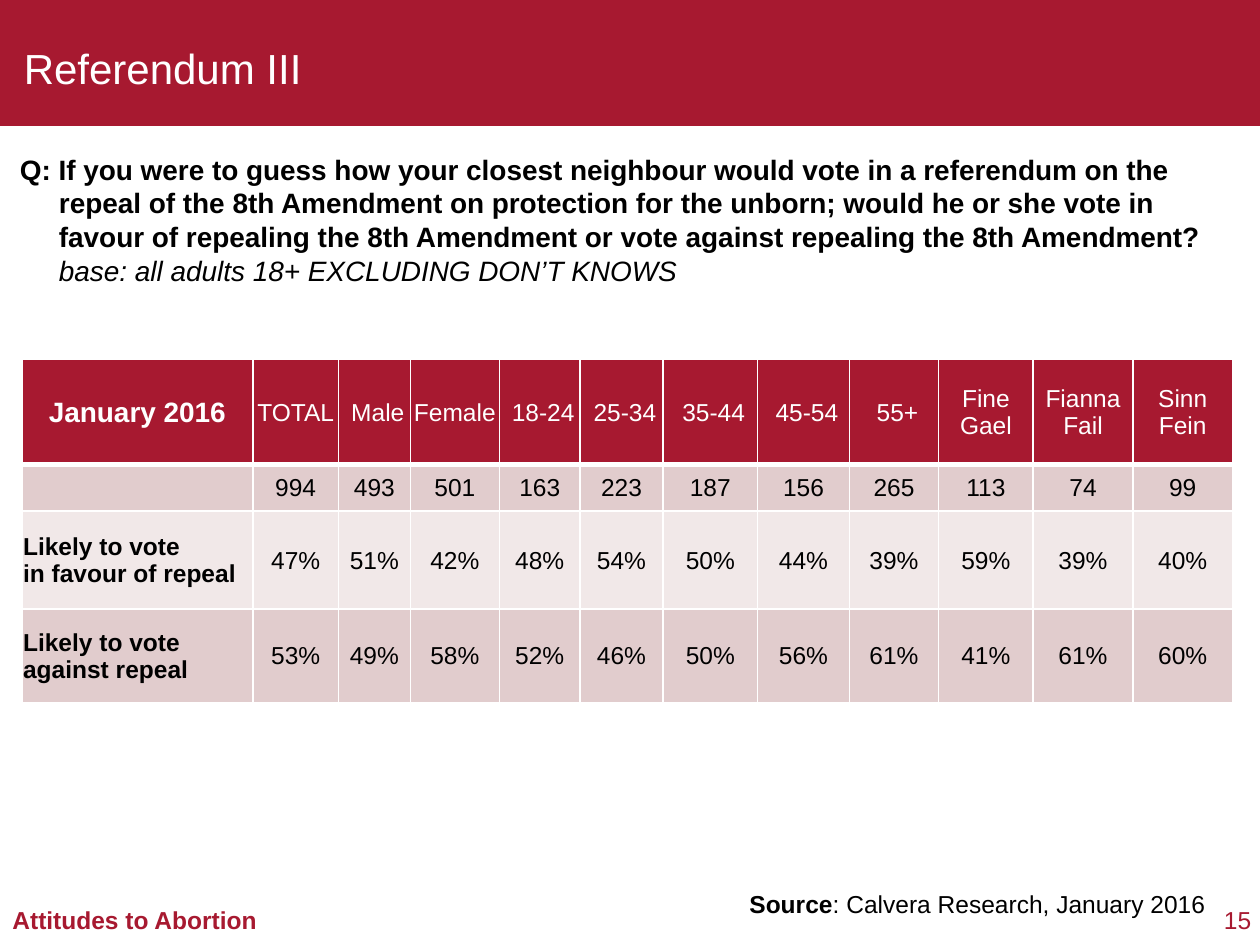
from lxml import etree
from pptx import Presentation
from pptx import util as u
from pptx.dml import color
from pptx.enum import shapes, text
from pptx.oxml import ns

Pt = u.Pt
COLORS = {"brand": "A71930", "white": "FFFFFF", "black": "000000",
          "band": "E1CCCD", "light": "F1E8E8"}
LEFT, CENTER, RIGHT = text.PP_ALIGN.LEFT, text.PP_ALIGN.CENTER, text.PP_ALIGN.RIGHT
COLUMNS = [132, 49, 41, 51, 46, 47.5, 54, 52.5, 51, 54, 57, 57]
ROWS = [60, 26.5, 56, 53.5]
NUDGED = ["Male", "18-24", "25-34", "35-44", "45-54", "55+"]
DATA = [
    ["January 2016", "TOTAL", "Male", "Female", "18-24", "25-34", "35-44",
     "45-54", "55+", "Fine Gael", "Fianna Fail", "Sinn Fein"],
    ["", "994", "493", "501", "163", "223", "187", "156", "265", "113", "74", "99"],
    ["Likely to vote\nin favour of repeal", "47%", "51%", "42%", "48%", "54%",
     "50%", "44%", "39%", "59%", "39%", "40%"],
    ["Likely to vote\nagainst repeal", "53%", "49%", "58%", "52%", "46%",
     "50%", "56%", "61%", "41%", "61%", "60%"],
]
QUESTION = ("Q: If you were to guess how your closest neighbour would vote in a "
            "referendum on the repeal of the 8th Amendment on protection for the "
            "unborn; would he or she vote in favour of repealing the 8th Amendment "
            "or vote against repealing the 8th Amendment?")


def rgb(name):
    """Return the named palette colour."""
    return color.RGBColor.from_string(COLORS[name])


def add_run(p, content, size=14, fill="black", bold=False, italic=False, align=LEFT):
    """Add one formatted run to a paragraph."""
    p.alignment = align
    r = p.add_run()
    r.text = content
    r.font.name, r.font.size = "Arial", Pt(size)
    r.font.bold, r.font.italic = bold, italic
    r.font.color.rgb = rgb(fill)


def add_box(s, left, top, width, height, inset=True):
    """Add a wrapping text box and return its text frame."""
    tf = s.shapes.add_textbox(Pt(left), Pt(top), Pt(width), Pt(height)).text_frame
    tf.word_wrap = True
    if not inset:
        tf.margin_left = tf.margin_right = tf.margin_top = tf.margin_bottom = 0
    return tf


def add_banner(s):
    """Add the coloured band with the slide title."""
    sp = s.shapes.add_shape(shapes.MSO_SHAPE.RECTANGLE, 0, 0, Pt(720), Pt(72))
    sp.shadow.inherit = False
    sp.fill.solid()
    sp.fill.fore_color.rgb = rgb("brand")
    sp.line.fill.background()
    tf = add_box(s, 6.5, 18, 558, 41)
    tf.vertical_anchor = text.MSO_ANCHOR.MIDDLE
    add_run(tf.paragraphs[0], "Referendum III", size=24, fill="white")


def add_question(s):
    """Add the survey question with its hanging indent and base note."""
    tf = add_box(s, 4.3, 83.5, 715, 85)
    base = tf.add_paragraph()
    for p, indent in zip(tf.paragraphs, (-22.3, 0)):
        pPr = p._p.get_or_add_pPr()
        pPr.set("marL", str(Pt(22.3)))
        pPr.set("indent", str(Pt(indent)))
    add_run(tf.paragraphs[0], QUESTION, size=16, bold=True)
    add_run(base, "base: all adults 18+ EXCLUDING DON’T KNOWS", size=16, italic=True)


def set_borders(cell, widths):
    """Give the cell white borders of the given widths by side."""
    tcPr = cell._tc.get_or_add_tcPr()
    for side in "LRTB":
        ln = etree.SubElement(tcPr, ns.qn(f"a:ln{side}"), w=str(Pt(widths.get(side, 1))))
        solid = etree.SubElement(ln, ns.qn("a:solidFill"))
        etree.SubElement(solid, ns.qn("a:srgbClr"), val=COLORS["white"])


def format_cell(cell, content, row, col):
    """Fill and write one table cell according to its row and column."""
    header, label = row == 0, col == 0
    set_borders(cell, {0: {"B": 3}, 1: {"T": 3}}.get(row, {}))
    cell.fill.solid()
    cell.fill.fore_color.rgb = rgb("brand" if header else "band" if row % 2 else "light")
    cell.vertical_anchor = text.MSO_ANCHOR.MIDDLE
    cell.margin_left = Pt(4.6 if content in NUDGED else 0.7)
    cell.margin_right = cell.margin_top = Pt(0.7)
    cell.margin_bottom = 0
    tf = cell.text_frame
    for i, line in enumerate(content.split("\n")):
        p = tf.add_paragraph() if i else tf.paragraphs[0]
        add_run(p, line, size=16 if header and label else 14,
                fill="white" if header else "black", bold=label,
                align=LEFT if label and not header else CENTER)


def add_results(s):
    """Add the table of voting intentions."""
    table = s.shapes.add_table(len(ROWS), len(COLUMNS), Pt(12.5), Pt(205.5),
                               Pt(sum(COLUMNS)), Pt(sum(ROWS))).table
    for column, width in zip(table.columns, COLUMNS):
        column.width = Pt(width)
    for row, height in zip(table.rows, ROWS):
        row.height = Pt(height)
    for i, values in enumerate(DATA):
        for j, value in enumerate(values):
            format_cell(table.cell(i, j), value, i, j)


def add_footer(s):
    """Add the deck name, source line and page number."""
    p = add_box(s, 0, 513.5, 165, 24.5).paragraphs[0]
    add_run(p, "Attitudes to Abortion", fill="brand", bold=True)
    p = add_box(s, 358, 504.5, 338, 24.5).paragraphs[0]
    add_run(p, "Source", bold=True, align=RIGHT)
    add_run(p, ": Calvera Research, January 2016", align=RIGHT)
    p = add_box(s, 690, 517, 25, 17, inset=False).paragraphs[0]
    add_run(p, "15", fill="brand", align=RIGHT)


def main():
    """Build the slide and save it."""
    prs = Presentation()
    prs.slide_width, prs.slide_height = Pt(720), Pt(540)
    s = prs.slides.add_slide(prs.slide_layouts[6])
    add_banner(s)
    add_question(s)
    add_results(s)
    add_footer(s)
    prs.save("out.pptx")


if __name__ == "__main__":
    main()
